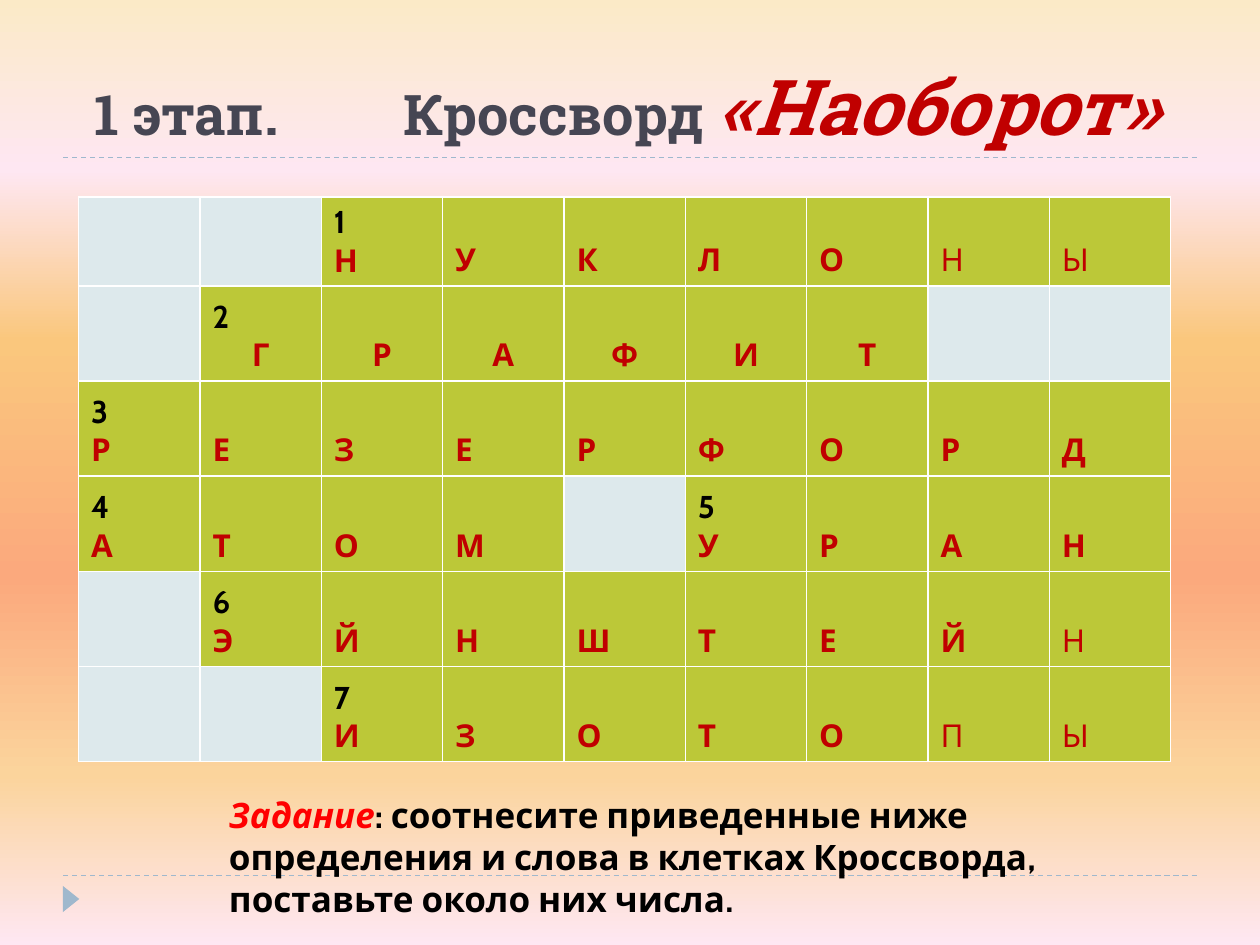
from lxml import etree
from pptx import Presentation
from pptx.dml.color import RGBColor
from pptx.enum.dml import MSO_LINE
from pptx.enum.shapes import MSO_CONNECTOR, MSO_SHAPE
from pptx.enum.text import MSO_ANCHOR, PP_ALIGN
from pptx.oxml.ns import qn
from pptx.util import Pt

DASH = MSO_LINE.DASH
STRAIGHT = MSO_CONNECTOR.STRAIGHT
TRIANGLE = MSO_SHAPE.ISOSCELES_TRIANGLE
BOTTOM, TOP = MSO_ANCHOR.BOTTOM, MSO_ANCHOR.TOP
LEFT, CENTER = PP_ALIGN.LEFT, PP_ALIGN.CENTER

COLORS = {
    "accent": "9FB8CD", "title": "464653", "crimson": "C00000", "red": "FF0000",
    "black": "000000", "white": "FFFFFF", "empty": "DDE9EC", "letter": "BCC838",
}
BACKGROUND_STOPS = [
    (0, "FBEAC7"), (18, "FEE7F2"), (36, "FAC77D"),
    (61, "FBA97D"), (82, "FBD49C"), (100, "FEE7F2"),
]
FORMATS = {
    "title": {"name": "Roboto Slab", "size": Pt(32), "bold": True, "color": "title"},
    "title_name": {"name": "Roboto Slab", "size": Pt(44), "bold": True, "italic": True, "color": "crimson"},
    "number": {"name": "Cabin", "size": Pt(18), "bold": True, "color": "black"},
    "answer": {"name": "Cabin", "size": Pt(18), "bold": True, "color": "crimson"},
    "light_answer": {"name": "Cabin", "size": Pt(18), "bold": False, "color": "crimson"},
    "task_label": {"name": "Cabin", "size": Pt(20), "bold": True, "italic": True, "color": "red"},
    "task": {"name": "Cabin", "size": Pt(20), "bold": True, "color": "black"},
}
CROSSWORD = ["  НУКЛОНЫ", " ГРАФИТ  ", "РЕЗЕРФОРД", "АТОМ УРАН", " ЭЙНШТЕЙН", "  ИЗОТОПЫ"]
NUMBERS = {(0, 2): "1", (1, 1): "2", (2, 0): "3", (3, 0): "4", (3, 5): "5", (4, 1): "6", (5, 2): "7"}
LIGHT_CELLS = {(0, 7), (0, 8), (4, 8), (5, 7), (5, 8)}
CENTERED_ROW = 1
COLUMN_WIDTH = 69.36
FIRST_ROW_HEIGHT, ROW_HEIGHT = 50.8, 54.4


def rgb(name):
    return RGBColor.from_string(COLORS[name])


def add_run(paragraph, text, format_name):
    run = paragraph.add_run()
    run.text = text
    for attribute, value in FORMATS[format_name].items():
        if attribute == "color":
            run.font.color.rgb = rgb(value)
        else:
            setattr(run.font, attribute, value)


def set_background(slide):
    fill = slide.background.fill
    fill.gradient()
    fill.gradient_angle = 270
    stops = slide.element.find(".//" + qn("a:gsLst"))
    for stop in list(stops):
        stops.remove(stop)
    for position, color in BACKGROUND_STOPS:
        stop = etree.SubElement(stops, qn("a:gs"), pos=str(position * 1000))
        etree.SubElement(stop, qn("a:srgbClr"), val=color)


def add_rule(slide, top):
    rule = slide.shapes.add_connector(STRAIGHT, Pt(36), Pt(top), Pt(684), Pt(top))
    rule.line.color.rgb = rgb("accent")
    rule.line.width = Pt(0.75)
    rule.line.dash_style = DASH
    etree.SubElement(rule.element.spPr, qn("a:effectLst"))


def add_marker(slide):
    marker = slide.shapes.add_shape(TRIANGLE, Pt(33.1), Pt(509), Pt(15), Pt(9.4))
    marker.rotation = 90
    marker.shadow.inherit = False
    marker.fill.solid()
    marker.fill.fore_color.rgb = rgb("accent")
    marker.line.fill.background()


def add_text(slide, left, top, width, height, runs, anchor=TOP, margin_left=7.2, tab=None):
    box = slide.shapes.add_textbox(Pt(left), Pt(top), Pt(width), Pt(height))
    frame = box.text_frame
    frame.word_wrap = True
    frame.vertical_anchor = anchor
    frame.margin_left = Pt(margin_left)
    paragraph = frame.paragraphs[0]
    if tab:
        properties = paragraph._p.get_or_add_pPr()
        tabs = etree.SubElement(properties, qn("a:tabLst"))
        etree.SubElement(tabs, qn("a:tab"), pos=str(Pt(tab)), algn="l")
    for text, format_name in runs:
        add_run(paragraph, text, format_name)


def set_borders(cell):
    properties = cell._tc.get_or_add_tcPr()
    for index, side in enumerate(("a:lnL", "a:lnR", "a:lnT", "a:lnB")):
        line = etree.Element(qn(side), w=str(Pt(1)))
        fill = etree.SubElement(line, qn("a:solidFill"))
        etree.SubElement(fill, qn("a:srgbClr"), val=COLORS["white"])
        properties.insert(index, line)


def fill_cell(cell, position, letter):
    cell.fill.solid()
    cell.fill.fore_color.rgb = rgb("letter" if letter.strip() else "empty")
    cell.vertical_anchor = BOTTOM
    set_borders(cell)
    if not letter.strip():
        return
    paragraph = cell.text_frame.paragraphs[0]
    if position in NUMBERS:
        add_run(paragraph, NUMBERS[position], "number")
        paragraph = cell.text_frame.add_paragraph()
    paragraph.alignment = CENTER if position[0] == CENTERED_ROW else LEFT
    add_run(paragraph, letter, "light_answer" if position in LIGHT_CELLS else "answer")


def add_crossword(slide):
    row_count, column_count = len(CROSSWORD), len(CROSSWORD[0])
    height = FIRST_ROW_HEIGHT + ROW_HEIGHT * (row_count - 1)
    frame = slide.shapes.add_table(
        row_count, column_count, Pt(44.9), Pt(112.5), Pt(COLUMN_WIDTH * column_count), Pt(height))
    table = frame.table
    table.first_row = False
    table.horz_banding = False
    for column in table.columns:
        column.width = Pt(COLUMN_WIDTH)
    for row_index, letters in enumerate(CROSSWORD):
        table.rows[row_index].height = Pt(ROW_HEIGHT if row_index else FIRST_ROW_HEIGHT)
        for column_index, letter in enumerate(letters):
            fill_cell(table.cell(row_index, column_index), (row_index, column_index), letter)


def main():
    presentation = Presentation()
    presentation.slide_width = Pt(720)
    presentation.slide_height = Pt(540)
    slide = presentation.slides.add_slide(presentation.slide_layouts[6])
    set_background(slide)
    for top in (500.4, 90):
        add_rule(slide, top)
    add_marker(slide)
    add_text(slide, 36, 12.2, 648, 77.8,
             [("1 этап.\tКроссворд ", "title"), ("«Наоборот»", "title_name")],
             anchor=BOTTOM, margin_left=18, tab=176.5)
    add_crossword(slide)
    add_text(slide, 123.8, 450, 528.5, 55.4, [
        ("Задание", "task_label"),
        (": соотнесите приведенные ниже определения и слова в клетках Кроссворда, "
         "поставьте около них числа.", "task"),
    ])
    presentation.save("out.pptx")


if __name__ == "__main__":
    main()
